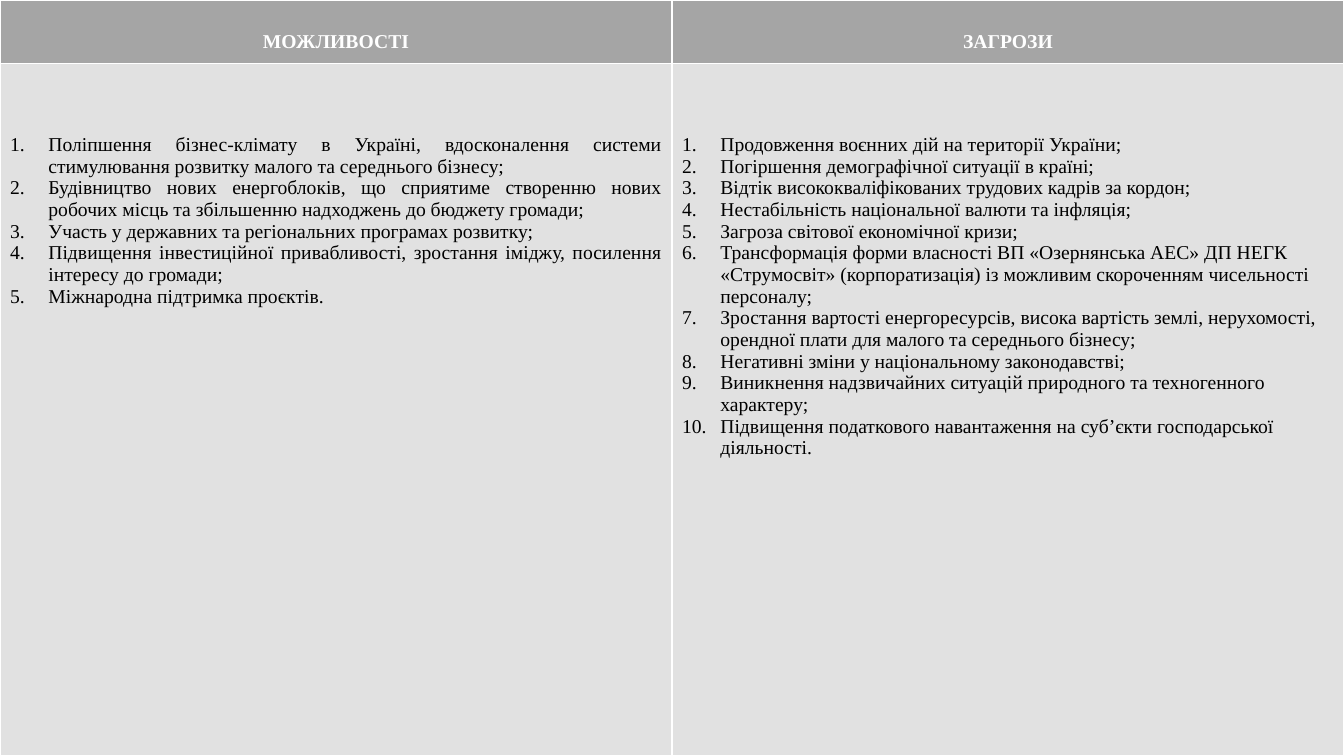
from dataclasses import dataclass

from lxml import etree
from pptx import Presentation
from pptx.dml.color import RGBColor
from pptx.enum.text import MSO_ANCHOR, PP_ALIGN
from pptx.oxml.ns import qn
from pptx.util import Inches, Pt

LEFT, CENTER, JUSTIFY = PP_ALIGN.LEFT, PP_ALIGN.CENTER, PP_ALIGN.JUSTIFY
TOP, MIDDLE = MSO_ANCHOR.TOP, MSO_ANCHOR.MIDDLE
BLANK_LAYOUT = 6


@dataclass(frozen=True)
class Theme:
    font: str = "Times New Roman"
    size: int = 14
    header_fill: str = "A5A5A5"
    header_text: str = "FFFFFF"
    body_fill: str = "E1E1E1"
    body_text: str = "000000"
    border: str = "FFFFFF"
    border_width: int = 1


THEME = Theme()
SLIDE_WIDTH, SLIDE_HEIGHT = Inches(13.33), Inches(7.5)
HEADER_HEIGHT = Inches(0.63)
LIST_INDENT = Inches(0.38)

OPPORTUNITIES = [
    "Поліпшення бізнес-клімату в Україні, вдосконалення системи стимулювання розвитку малого та середнього бізнесу;",
    "Будівництво нових енергоблоків, що сприятиме створенню нових робочих місць та збільшенню надходжень до бюджету громади;",
    "Участь у державних та регіональних програмах розвитку;",
    "Підвищення інвестиційної привабливості, зростання іміджу, посилення інтересу до громади;",
    "Міжнародна підтримка проєктів.",
]
THREATS = [
    "Продовження воєнних дій на території України;",
    "Погіршення демографічної ситуації в країні;",
    "Відтік висококваліфікованих трудових кадрів за кордон;",
    "Нестабільність національної валюти та інфляція;",
    "Загроза світової економічної кризи;",
    "Трансформація форми власності ВП «Озернянська АЕС» ДП НЕГК «Струмосвіт» (корпоратизація) із можливим скороченням чисельності персоналу;",
    "Зростання вартості енергоресурсів, висока вартість землі, нерухомості, орендної плати для малого та середнього бізнесу;",
    "Негативні зміни у національному законодавстві;",
    "Виникнення надзвичайних ситуацій природного та техногенного характеру;",
    "Підвищення податкового навантаження на суб’єкти господарської діяльності.",
]
# Heading, list items and list alignment of each column
COLUMNS = [
    ("МОЖЛИВОСТІ", OPPORTUNITIES, JUSTIFY),
    ("ЗАГРОЗИ", THREATS, LEFT),
]


def style_cell(cell, fill, **layout):
    """Draw the borders, then the fill, then set margins and anchor."""
    properties = cell._tc.get_or_add_tcPr()
    for side in ("a:lnL", "a:lnR", "a:lnT", "a:lnB"):
        line = etree.SubElement(properties, qn(side), w=str(Pt(THEME.border_width)))
        solid = etree.SubElement(line, qn("a:solidFill"))
        etree.SubElement(solid, qn("a:srgbClr"), val=THEME.border)
    cell.fill.solid()
    cell.fill.fore_color.rgb = RGBColor.from_string(fill)
    for name, value in layout.items():
        setattr(cell, name, value)


def format_paragraph(paragraph, alignment, color, bold):
    paragraph.alignment = alignment
    font = paragraph.runs[0].font
    for name, value in {"name": THEME.font, "size": Pt(THEME.size), "bold": bold}.items():
        setattr(font, name, value)
    font.color.rgb = RGBColor.from_string(color)


def add_heading(cell, heading):
    style_cell(cell, THEME.header_fill, margin_top=Inches(0.26),
               margin_bottom=Inches(0.05), vertical_anchor=MIDDLE)
    cell.text_frame.text = heading
    format_paragraph(cell.text_frame.paragraphs[0], CENTER, THEME.header_text, True)


def add_numbered_list(cell, items, alignment):
    style_cell(cell, THEME.body_fill, margin_top=Inches(0.7), vertical_anchor=TOP)
    cell.text_frame.text = "\n".join(items)
    for paragraph in cell.text_frame.paragraphs:
        properties = paragraph._p.get_or_add_pPr()
        properties.set("marL", str(LIST_INDENT))
        properties.set("indent", str(-LIST_INDENT))
        etree.SubElement(properties, qn("a:buFont"), typeface=THEME.font)
        etree.SubElement(properties, qn("a:buAutoNum"), type="arabicPeriod")
        format_paragraph(paragraph, alignment, THEME.body_text, False)


def add_swot_table(slide, left, top, width, height):
    table = slide.shapes.add_table(2, len(COLUMNS), left, top, width, height).table
    table.first_row = table.horz_banding = False
    table.rows[0].height = HEADER_HEIGHT
    table.rows[1].height = height - HEADER_HEIGHT
    for index, (heading, items, alignment) in enumerate(COLUMNS):
        table.columns[index].width = width // len(COLUMNS)
        add_heading(table.cell(0, index), heading)
        add_numbered_list(table.cell(1, index), items, alignment)


def main():
    presentation = Presentation()
    presentation.slide_width, presentation.slide_height = SLIDE_WIDTH, SLIDE_HEIGHT
    slide = presentation.slides.add_slide(presentation.slide_layouts[BLANK_LAYOUT])
    # The table covers the whole slide
    add_swot_table(slide, Inches(0), Inches(0), SLIDE_WIDTH, SLIDE_HEIGHT)
    presentation.save("out.pptx")


if __name__ == "__main__":
    main()
